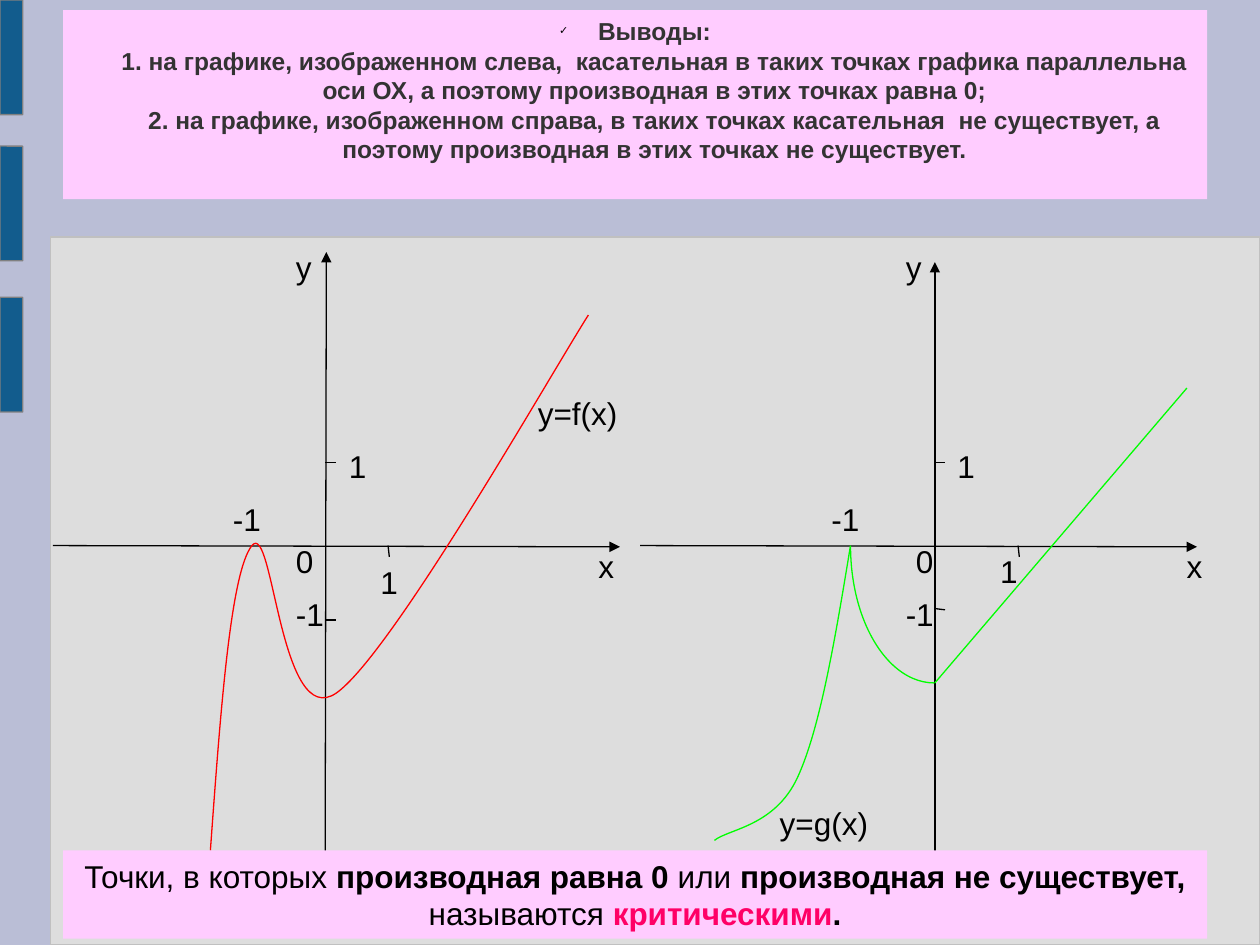
from copy import deepcopy

from lxml import etree
from pptx import Presentation
from pptx import util as u
from pptx.dml.color import RGBColor
from pptx.enum import shapes, text
from pptx.oxml import ns

BACKDROP = RGBColor(0xBA, 0xBE, 0xD6)
PANEL = RGBColor(0xDD, 0xDD, 0xDD)
PANEL_EDGE = RGBColor(0xC0, 0xC0, 0xC0)
TAB = RGBColor(0x12, 0x5C, 0x8D)
TAB_EDGE = RGBColor(0x80, 0x80, 0x80)
PINK = RGBColor(0xFF, 0xCC, 0xFF)
BLACK = RGBColor(0, 0, 0)
DARK = RGBColor(0x33, 0x33, 0x33)
RED = RGBColor(0xFF, 0, 0)
GREEN = RGBColor(0, 0xFF, 0)
CRIMSON = RGBColor(0xFF, 0, 0x66)

CONCLUSIONS = [
    "Выводы:",
    "1. на графике, изображенном слева,  касательная в таких точках графика "
    "параллельна оси ОХ, а поэтому производная в этих точках равна 0;",
    "2. на графике, изображенном справа, в таких точках касательная  не существует, "
    "а поэтому производная в этих точках не существует.",
]
DEFINITION = [
    ("Точки, в которых ", False, BLACK),
    ("производная равна 0", True, BLACK),
    (" или ", False, BLACK),
    ("производная не существует, ", True, BLACK),
    ("называются ", False, BLACK),
    ("критическими", True, CRIMSON),
    (".", True, BLACK),
]

F_CURVE = [(1.67, 6.75), (1.75, 5.65), (1.83, 4.54), (2, 4.33), (2.17, 4.12),
           (2.22, 5.81), (2.67, 5.5), (3.11, 5.19), (4.36, 2.99), (4.67, 2.5)]
G_TAIL = [(6.75, 4.33), (6.63, 5.06), (6.51, 5.78), (6.33, 6.17),
          (6.15, 6.56), (5.78, 6.58), (5.67, 6.67)]

F_AXES = [((0.42, 4.33), (4.92, 4.34)), ((2.58, 7.25), (2.59, 2))]
G_AXES = [((5.08, 4.33), (9.5, 4.34)), ((7.42, 7.25), (7.42, 2.08))]
F_TICKS = [((2.58, 4.92), (2.67, 4.92)), ((3.08, 4.33), (3.09, 4.42)),
           ((2.58, 3.67), (2.67, 3.67))]
G_TICKS = [((6.75, 4.33), (6.75, 4.42)), ((7.42, 4.83), (7.5, 4.84)),
           ((8.08, 4.33), (8.09, 4.42)), ((7.42, 3.67), (7.5, 3.67))]

F_LABELS = [("1", 2.67, 3.5), ("1", 2.92, 4.42), ("-1", 2.25, 4.67), ("0", 2.25, 4.25),
            ("х", 4.65, 4.29), ("у", 2.25, 1.92), ("-1", 1.75, 3.92), ("y=f(x)", 4.17, 3.08)]
G_LABELS = [("1", 7.5, 3.5), ("1", 7.84, 4.33), ("-1", 7.09, 4.67), ("0", 7.17, 4.25),
            ("х", 9.32, 4.29), ("у", 7.09, 1.92), ("-1", 6.5, 3.92), ("y=g(x)", 6.09, 6.33)]
LABEL_WIDTHS = {"1": 0.34, "0": 0.34, "-1": 0.42, "х": 0.32, "у": 0.32,
                "y=f(x)": 0.83, "y=g(x)": 0.9}


class PageBuilder:
    font = "Arial"
    line_width = u.Pt(0.75)

    def __init__(self, page):
        self.page = page
        fill = page.background.fill
        fill.solid()
        fill.fore_color.rgb = BACKDROP

    def outline(self, shape, color):
        shape.line.color.rgb = color
        shape.line.width = self.line_width

    def paint(self, shape, fill, edge=None):
        shape.fill.solid()
        shape.fill.fore_color.rgb = fill
        if edge is None:
            shape.line.fill.background()
        else:
            self.outline(shape, edge)

    def preset(self, kind, left, top, width, height):
        shape = self.page.shapes.add_shape(kind, *map(u.Inches, (left, top, width, height)))
        shape.shadow.inherit = False
        return shape

    def rounded(self, left, top, width, height, fill, edge, rounding):
        shape = self.preset(shapes.MSO_SHAPE.ROUNDED_RECTANGLE, left, top, width, height)
        shape.adjustments[0] = rounding
        self.paint(shape, fill, edge)

    def line(self, start, end, color=BLACK, arrow=False):
        line = self.page.shapes.add_connector(
            shapes.MSO_CONNECTOR.STRAIGHT, *map(u.Inches, (*start, *end)))
        self.outline(line, color)
        if arrow:
            etree.SubElement(line.line._get_or_add_ln(), ns.qn("a:tailEnd"), type="triangle")
        etree.SubElement(line._element.spPr, ns.qn("a:effectLst"))

    def trace(self, shape, color):
        shape.shadow.inherit = False
        shape.fill.background()
        self.outline(shape, color)

    def curve(self, knots, color):
        points = [(u.Inches(x), u.Inches(y)) for x, y in knots]
        builder = self.page.shapes.build_freeform(*points[0])
        builder.add_line_segments(points[1:], close=False)
        shape = builder.convert_to_shape()
        segments = list(shape._element.iter(ns.qn("a:lnTo")))
        outline = segments[0].getparent()
        for start in range(0, len(segments), 3):
            bend = etree.SubElement(outline, ns.qn("a:cubicBezTo"))
            for segment in segments[start:start + 3]:
                bend.append(segment[0])
                outline.remove(segment)
        self.trace(shape, color)

    def arc(self, left, top, width, height, turn, color):
        shape = self.preset(shapes.MSO_SHAPE.ARC, left, top, width, height)
        shape.rotation = turn
        self.trace(shape, color)

    def span(self, para, words, size, color=BLACK, bold=False):
        span = para.add_run()
        span.text = words
        span.font.name = self.font
        span.font.size = u.Pt(size)
        span.font.bold = bold
        span.font.color.rgb = color
        return span

    def label(self, words, left, top):
        box = self.page.shapes.add_textbox(
            *map(u.Inches, (left, top, LABEL_WIDTHS[words], 0.4)))
        box.text_frame.word_wrap = False
        box.text_frame.auto_size = text.MSO_AUTO_SIZE.SHAPE_TO_FIT_TEXT
        self.span(box.text_frame.paragraphs[0], words, 18)

    def axes(self, axes, ticks):
        for start, end in axes:
            self.line(start, end, arrow=True)
        for start, end in ticks:
            self.line(start, end)

    def title(self, lines):
        box = self.page.shapes.title
        box.left, box.top, box.width, box.height = map(u.Inches, (0.5, 0.08, 9.08, 1.5))
        self.paint(box, PINK)
        self.page.shapes._spTree.append(box._element)
        frame = box.text_frame
        frame.word_wrap = True
        frame.auto_size = text.MSO_AUTO_SIZE.NONE
        frame.vertical_anchor = text.MSO_ANCHOR.MIDDLE
        para = frame.paragraphs[0]
        para.alignment = text.PP_ALIGN.CENTER
        para.line_spacing = 1.0
        for words in lines:
            span = self.span(para, words, 14, DARK, bold=True)
            para.add_line_break()
        style = span._r.rPr
        for line_break in para._p.findall(ns.qn("a:br")):
            line_break.append(deepcopy(style))
        closing = etree.SubElement(para._p, ns.qn("a:endParaRPr"), dict(style.attrib))
        closing.extend(deepcopy(list(style)))
        self.bullet(para, "✓")

    def bullet(self, para, mark):
        props = para._p.get_or_add_pPr()
        props.set("marL", str(u.Inches(0.31)))
        props.set("indent", str(u.Inches(-0.31)))
        color = etree.SubElement(props, ns.qn("a:buClr"))
        etree.SubElement(color, ns.qn("a:srgbClr"), val=str(BLACK))
        etree.SubElement(props, ns.qn("a:buSzPct"), val="45000")
        etree.SubElement(props, ns.qn("a:buFont"), typeface=self.font)
        etree.SubElement(props, ns.qn("a:buChar"), char=mark)

    def definition(self, parts):
        box = self.preset(shapes.MSO_SHAPE.RECTANGLE, 0.5, 6.75, 9.08, 0.7)
        self.paint(box, PINK)
        frame = box.text_frame
        frame.word_wrap = True
        frame.vertical_anchor = text.MSO_ANCHOR.TOP
        para = frame.paragraphs[0]
        para.alignment = text.PP_ALIGN.CENTER
        for words, bold, color in parts:
            self.span(para, words, 18, color, bold)


def main():
    deck = Presentation()
    deck.slide_width, deck.slide_height = u.Inches(10), u.Inches(7.5)
    builder = PageBuilder(deck.slides.add_slide(deck.slide_layouts[5]))

    builder.rounded(0.4, 1.88, 9.6, 5.62, PANEL, PANEL_EDGE, 0)
    for top in (0, 1.16, 2.36):
        builder.rounded(0, top, 0.18, 0.91, TAB, TAB_EDGE, 0.01)

    builder.axes(F_AXES, F_TICKS)
    builder.curve(F_CURVE, RED)

    builder.axes(G_AXES, G_TICKS)
    builder.arc(6.75, 3.25, 1.33, 2.17, 180, GREEN)
    builder.line((7.42, 5.42), (9.42, 3.08), GREEN)
    builder.curve(G_TAIL, GREEN)

    for words, left, top in F_LABELS + G_LABELS:
        builder.label(words, left, top)
    builder.title(CONCLUSIONS)
    builder.definition(DEFINITION)
    deck.save("out.pptx")


if __name__ == "__main__":
    main()
